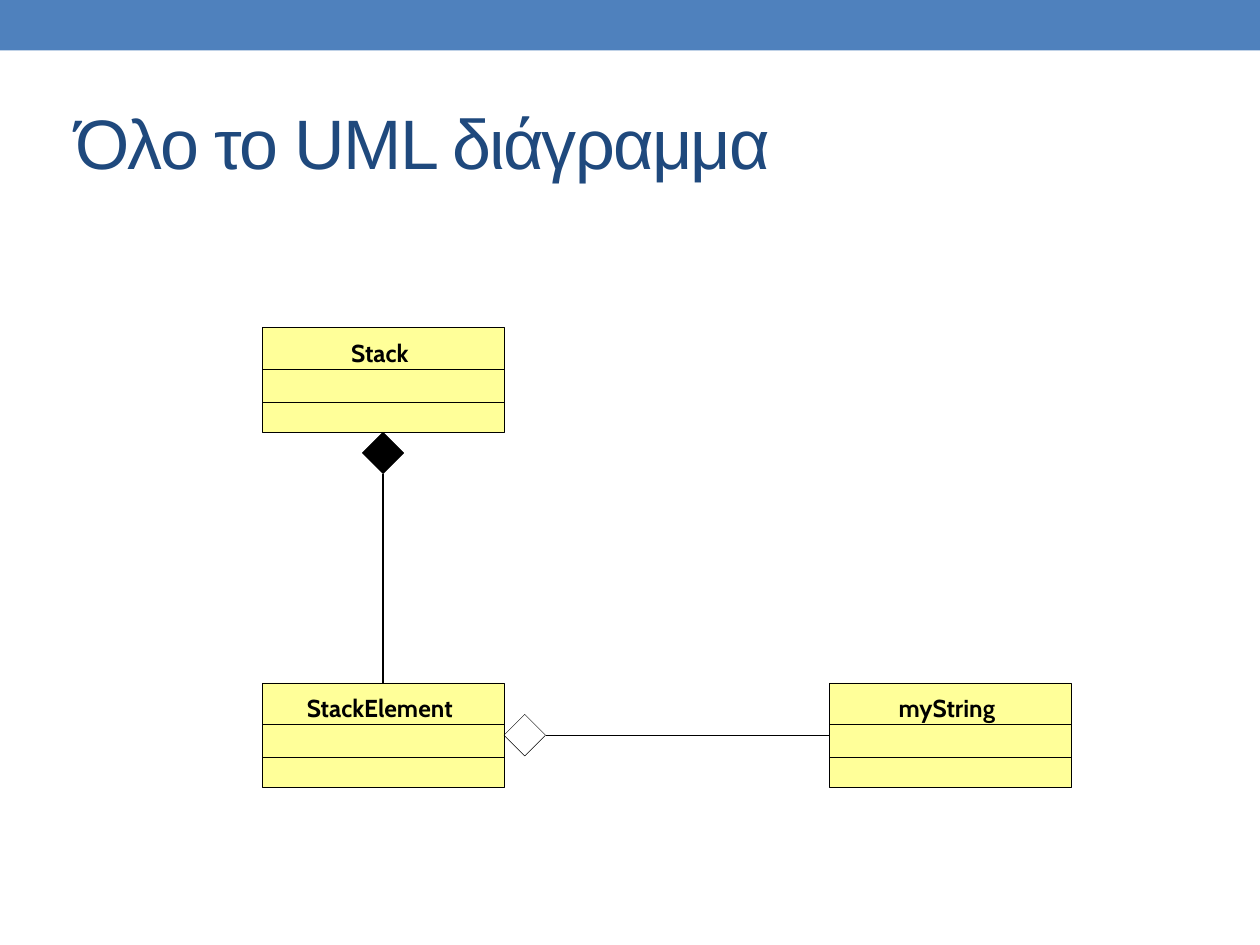
from lxml import etree
from pptx import Presentation, util as u
from pptx.dml.color import RGBColor
from pptx.enum import shapes, text
from pptx.oxml import ns

COLOURS = {"band": "4F81BD", "title": "1F497D", "class": "FFFF99", "ink": "000000"}
TITLE_FONT = {"name": "Arial", "size": u.Pt(40), "bold": False}
CLASS_FONT = {"name": "Cabin", "size": u.Pt(14), "bold": True}
TOP, LEFT, BOTTOM, RIGHT = range(4)
CLASS_WIDTH, CLASS_HEIGHT, DIAMOND = 1.92, 0.83, 0.33
HAIRLINE = 0.25


class UmlSlide:
    """Draws UML elements on one slide in a shared style."""

    def __init__(self, slide):
        self.slide = slide

    def ink(self, line, width):
        line.color.rgb = RGBColor.from_string(COLOURS["ink"])
        line.width = u.Pt(width)

    def words(self, frame, wording, colour, font, align):
        paragraph = frame.paragraphs[0]
        paragraph.alignment = align
        run = paragraph.add_run()
        run.text = wording
        for key, value in font.items():
            setattr(run.font, key, value)
        run.font.color.rgb = RGBColor.from_string(COLOURS[colour])
        return run

    def title(self, wording, *box):
        heading = self.slide.shapes.title
        heading.left, heading.top, heading.width, heading.height = map(u.Inches, box)
        heading.text_frame.vertical_anchor = text.MSO_ANCHOR.MIDDLE
        run = self.words(heading.text_frame, wording, "title", TITLE_FONT, text.PP_ALIGN.LEFT)
        run._r.get_or_add_rPr().set("spc", "-100")

    def shape(self, kind, box, fill=None, outlined=True, parent=None):
        drawn = (parent or self.slide).shapes.add_shape(kind, *map(u.Inches, box))
        drawn.shadow.inherit = False
        if fill:
            drawn.fill.solid()
            drawn.fill.fore_color.rgb = RGBColor.from_string(COLOURS[fill])
        else:
            drawn.fill.background()
        if outlined:
            self.ink(drawn.line, HAIRLINE)
        else:
            drawn.line.fill.background()
        return drawn

    def line(self, start=(0, 0), end=(0, 0), width=HAIRLINE, parent=None):
        rule = (parent or self.slide).shapes.add_connector(
            shapes.MSO_CONNECTOR.STRAIGHT, *map(u.Inches, (*start, *end)))
        self.ink(rule.line, width)
        etree.SubElement(rule._element.spPr, ns.qn("a:effectLst"))
        return rule

    def uml_class(self, name, left, top):
        group = self.slide.shapes.add_group_shape()
        frame = self.shape(shapes.MSO_SHAPE.RECTANGLE,
                           (left, top, CLASS_WIDTH, CLASS_HEIGHT), "class", parent=group)
        label = group.shapes.add_textbox(
            *map(u.Inches, (left + 0.07, top + 0.03, 1.73, 0.34))).text_frame
        label.word_wrap = True
        self.words(label, name, "ink", CLASS_FONT, text.PP_ALIGN.CENTER)
        for offset in (0.33, 0.59):
            self.line((left, top + offset), (left + CLASS_WIDTH, top + offset), parent=group)
        return frame

    def diamond(self, left, top, fill=None):
        return self.shape(shapes.MSO_SHAPE.DIAMOND, (left, top, DIAMOND, DIAMOND), fill)

    def relation(self, whole, whole_side, part, part_side, width):
        link = self.line(width=width)
        link.begin_connect(whole, whole_side)
        link.end_connect(part, part_side)


def main():
    deck = Presentation()
    deck.slide_width, deck.slide_height = u.Inches(10), u.Inches(7.5)
    uml = UmlSlide(deck.slides.add_slide(deck.slide_layouts[5]))

    uml.shape(shapes.MSO_SHAPE.RECTANGLE, (0, 0, 10, 0.4), "band", outlined=False)
    uml.title("Όλο το UML διάγραμμα", 0.5, 0.58, 9, 1.08)

    column, upper, lower = 2.08, 2.6, 5.42
    element = uml.uml_class("StackElement", column, lower)
    string = uml.uml_class("myString", 6.58, lower)
    uml.uml_class("Stack", column, upper)

    aggregation = uml.diamond(column + CLASS_WIDTH, lower + (CLASS_HEIGHT - DIAMOND) / 2)
    composition = uml.diamond(column + (CLASS_WIDTH - DIAMOND) / 2, upper + CLASS_HEIGHT, "ink")
    uml.relation(aggregation, RIGHT, string, LEFT, HAIRLINE)
    uml.relation(composition, BOTTOM, element, TOP, 0.75)

    deck.save("out.pptx")


if __name__ == "__main__":
    main()
